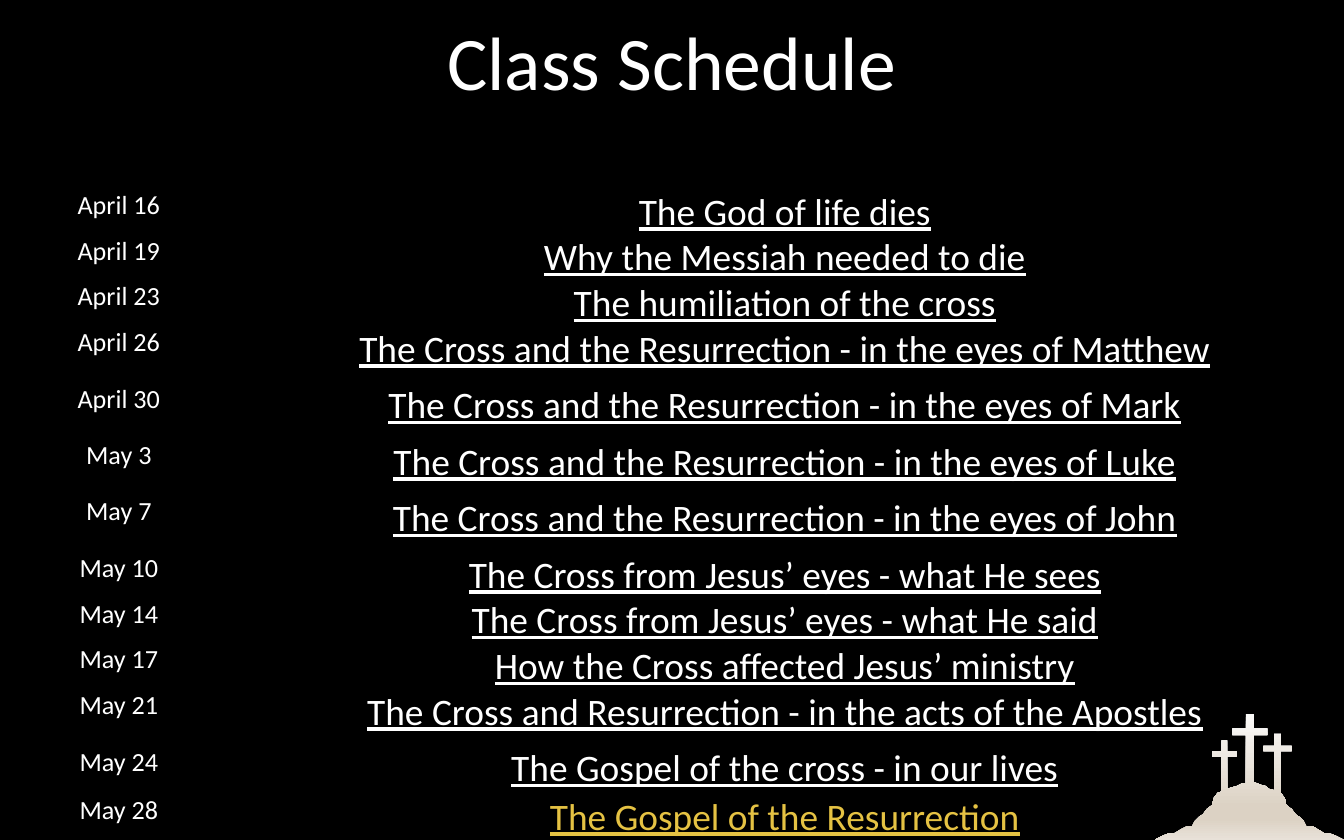
from lxml import etree
from pptx import Presentation
from pptx.dml.color import RGBColor
from pptx.enum.text import MSO_ANCHOR, PP_ALIGN
from pptx.oxml.ns import qn
from pptx.util import Inches, Pt

CENTER = PP_ALIGN.CENTER
MIDDLE = MSO_ANCHOR.MIDDLE
TITLE_ONLY = 5
WHITE, BLACK, GOLD = "FFFFFF", "000000", "E5C243"

TITLE = "Class Schedule"
# date, topic, row height; all rows end at the slide's bottom edge
CLASSES = [
    ("April 16", "The God of life dies", 0.34),
    ("April 19", "Why the Messiah needed to die", 0.34),
    ("April 23", "The humiliation of the cross", 0.34),
    ("April 26", "The Cross and the Resurrection - in the eyes of Matthew", 0.42),
    ("April 30", "The Cross and the Resurrection - in the eyes of Mark", 0.42),
    ("May 3", "The Cross and the Resurrection - in the eyes of Luke", 0.42),
    ("May 7", "The Cross and the Resurrection - in the eyes of John", 0.42),
    ("May 10", "The Cross from Jesus’ eyes - what He sees", 0.34),
    ("May 14", "The Cross from Jesus’ eyes - what He said", 0.34),
    ("May 17", "How the Cross affected Jesus’ ministry", 0.34),
    ("May 21", "The Cross and Resurrection - in the acts of the Apostles", 0.42),
    ("May 24", "The Gospel of the cross - in our lives", 0.36),
    ("May 28", "The Gospel of the Resurrection", 0.34),
]
TOP_ROW = 0.43
COLS = [1.77, 8.14, 0.09]

# hill outline in hundredths of an inch, clockwise from the middle cross
HILL = [
    (927, 531), (933, 531), (933, 542), (943, 542), (943, 547), (933, 547),
    (933, 582), (938, 584), (942, 585), (944, 587), (948, 588),
    (948, 559), (940, 559), (940, 555), (948, 555), (948, 546), (953, 546),
    (953, 555), (961, 555), (961, 559), (953, 559), (953, 590), (956, 594),
    (957, 599), (961, 602), (964, 606), (967, 608), (970, 611), (972, 615),
    (977, 615), (982, 618), (985, 620), (989, 620), (994, 622), (1000, 625),
    (859, 625), (865, 622), (870, 620), (874, 620), (879, 617), (883, 615),
    (887, 615), (889, 611), (892, 608), (895, 606), (898, 602), (902, 599),
    (903, 594), (906, 590), (909, 589), (909, 563), (902, 563), (902, 559),
    (909, 559), (909, 551), (913, 551), (913, 559), (920, 559), (920, 563),
    (913, 563), (913, 587), (920, 585), (924, 583), (927, 583),
    (927, 547), (917, 547), (917, 542), (927, 542),
]
STOPS = [(0, "FBFAF9"), (74, "DCD2C4"), (83, "DCD2C4"), (100, "E8E1D8")]


def color(code):
    """Turn a hex string into a colour."""
    return RGBColor.from_string(code)


def write(frame, text, size, tint=WHITE, line=None, gap=None):
    """Put one centred, formatted paragraph into a text frame."""
    para = frame.paragraphs[0]
    para.alignment = CENTER
    para.line_spacing = gap
    run = para.add_run()
    run.text = text
    font = run.font
    font.name, font.size, font.underline = "Calibri", Pt(size), line
    font.color.rgb = color(tint)


def clear(cell):
    """Give a cell tight margins, thin black borders and no fill."""
    cell.margin_left = cell.margin_right = Inches(0.03)
    cell.margin_top = cell.margin_bottom = 0
    props = cell._tc.get_or_add_tcPr()
    for side in ("lnL", "lnR", "lnT", "lnB"):
        edge = etree.SubElement(props, qn("a:" + side), w=str(Pt(1)))
        fill = etree.SubElement(edge, qn("a:solidFill"))
        etree.SubElement(fill, qn("a:srgbClr"), val=BLACK)
    cell.fill.background()


def add_table(slide):
    """Add the schedule of dates and topics."""
    rows = [("", "", TOP_ROW)] + CLASSES
    highs = [row[2] for row in rows]
    table = slide.shapes.add_table(
        len(rows), len(COLS), 0, Inches(0.98), Inches(sum(COLS)),
        Inches(sum(highs))).table
    table.first_row = table.horz_banding = False
    for col, wide in zip(table.columns, COLS):
        col.width = Inches(wide)
    for row, (date, topic, high) in zip(table.rows, rows):
        row.height = Inches(high)
        for cell in row.cells:
            clear(cell)
        if date:
            tint = GOLD if topic == CLASSES[-1][1] else WHITE
            write(row.cells[0].text_frame, date, 14)
            write(row.cells[1].text_frame, topic, 20, tint, line=True)


def add_hill(slide):
    """Draw the hill with three crosses, shaded from top to bottom."""
    pen = slide.shapes.build_freeform(*HILL[0], scale=Inches(0.01))
    pen.add_line_segments(HILL[1:], close=True)
    hill = pen.convert_to_shape()
    hill.shadow.inherit = False
    hill.line.fill.background()
    hill.fill.gradient()
    hill.fill.gradient_angle = 270
    stops = hill._element.spPr.find(".//" + qn("a:gsLst"))
    stops.clear()
    for spot, code in STOPS:
        stop = etree.SubElement(stops, qn("a:gs"), pos=str(spot * 1000))
        etree.SubElement(stop, qn("a:srgbClr"), val=code)


def main():
    """Build and save the slide."""
    deck = Presentation()
    deck.slide_width, deck.slide_height = Inches(10), Inches(6.25)
    slide = deck.slides.add_slide(deck.slide_layouts[TITLE_ONLY])
    slide.background.fill.solid()
    slide.background.fill.fore_color.rgb = color(BLACK)
    title = slide.shapes.title
    title.left, title.top = 0, 0
    title.width, title.height = Inches(10), Inches(0.98)
    title.text_frame.vertical_anchor = MIDDLE
    write(title.text_frame, TITLE, 40.5, gap=0.9)
    add_table(slide)
    add_hill(slide)
    deck.save("out.pptx")


main()
